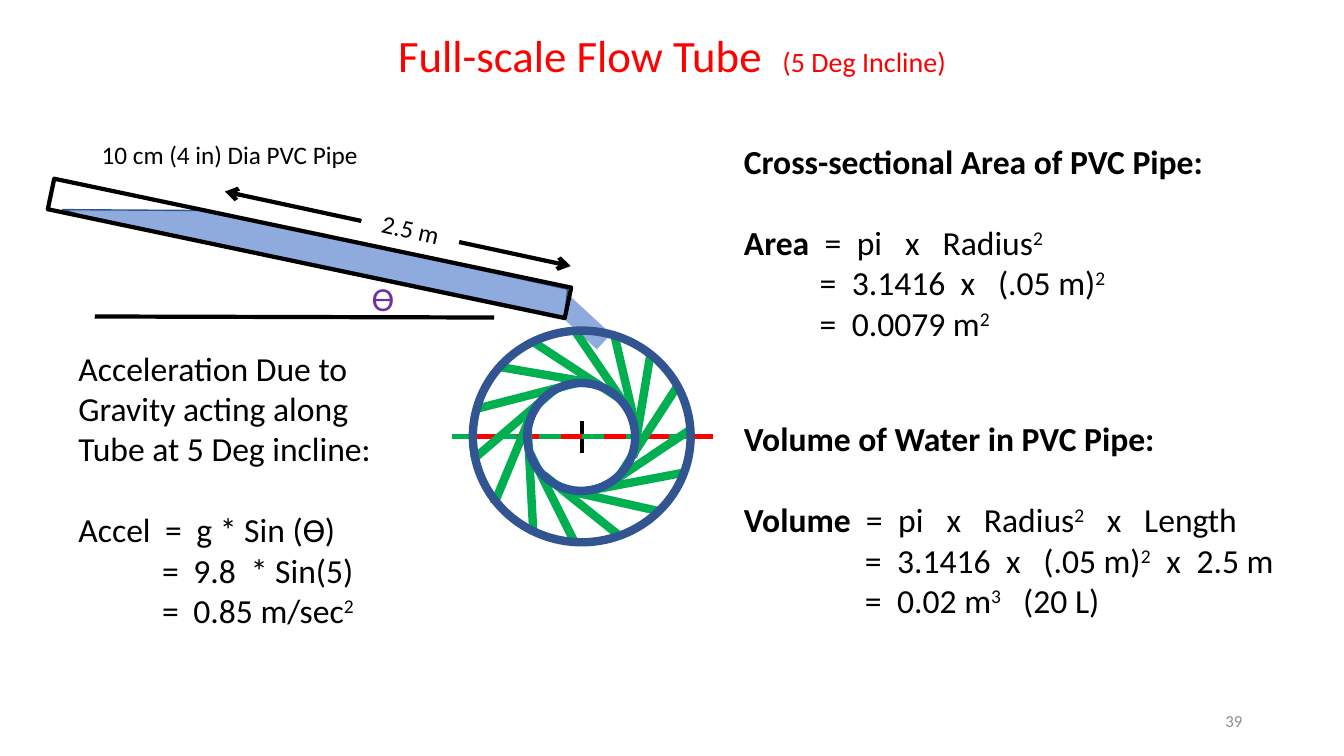
from pptx import Presentation
from pptx.dml.color import RGBColor
from pptx.enum import shapes, text
from pptx.oxml.ns import qn
from pptx.util import Inches, Pt
from lxml import etree


def draw_line(parent, points, color, width, arrows=False):
    """Add a straight line; points are x1, y1, x2, y2 in inches."""
    line = parent.shapes.add_connector(
        shapes.MSO_CONNECTOR.STRAIGHT, *[Inches(v) for v in points])
    line.line.color.rgb = RGBColor.from_string(color)
    line.line.width = Pt(width)
    properties = line.line._get_or_add_ln()
    if arrows:
        for end in ("a:headEnd", "a:tailEnd"):
            etree.SubElement(properties, qn(end), type="arrow")
    etree.SubElement(properties.getparent(), qn("a:effectLst"))


def style(item, color, size, bold=None):
    """Set the font of a paragraph or a run."""
    item.font.name = "Calibri"
    item.font.size = Pt(size)
    item.font.bold = bold
    item.font.color.rgb = RGBColor.from_string(color)


prs = Presentation()
prs.slide_width, prs.slide_height = Inches(13.33), Inches(7.5)
slide = prs.slides.add_slide(prs.slide_layouts[5])

# Title
title = slide.shapes.title
title.left, title.top = Inches(1.54), Inches(0.22)
title.width, title.height = Inches(10.25), Inches(0.64)
title.text_frame.auto_size = text.MSO_AUTO_SIZE.NONE
title.text_frame.vertical_anchor = text.MSO_ANCHOR.TOP
heading = title.text_frame.paragraphs[0]
heading.alignment = text.PP_ALIGN.CENTER
for words, size in (("Full-scale Flow Tube  ", 32), ("(5 Deg Incline)", 20)):
    run = heading.add_run()
    run.text = words
    style(run, "FF0000", size)

# Water in and below the pipe
draw_line(slide, (5.58, 3.01, 5.99, 3.39), "8FAADC", 15)
water_outline = [(Inches(x), Inches(y)) for x, y in
                 [(0.62, 2.08), (2.08, 2.09), (5.63, 2.87), (5.6, 3.14), (0.82, 2.14)]]
builder = slide.shapes.build_freeform(*water_outline[0], scale=1.0)
builder.add_line_segments(water_outline[1:], close=True)
water = builder.convert_to_shape()
water.shadow.inherit = False
water.fill.solid()
water.fill.fore_color.rgb = RGBColor.from_string("8FAADC")
water.line.color.rgb = RGBColor.from_string("325491")
water.line.width = Pt(1)

# Water wheel: axle cross, dashed centre line, vanes, rims
wheel = slide.shapes.add_group_shape()
draw_line(wheel, (5.77, 4.18, 5.77, 4.49), "000000", 3)
draw_line(wheel, (5.61, 4.33, 5.93, 4.33), "000000", 3)
DASH = 0.216
for i in range(12):
    left = 4.48 + i * DASH
    draw_line(wheel, (left, 4.33, left + DASH, 4.33), ("00B050", "FF0000")[i % 2], 3)

vanes = [
    (5.7, 3.28, 6.28, 4.13), (6.09, 3.31, 6.32, 4.29), (6.45, 3.52, 6.28, 4.54),
    (6.85, 4.26, 5.97, 4.85), (6.72, 3.83, 6.11, 4.77), (6.78, 4.69, 5.72, 4.89),
    (6.53, 5.07, 5.55, 4.85), (6.15, 5.32, 5.39, 4.71), (5.71, 5.4, 5.26, 4.5),
    (4.9, 5, 5.29, 4.06), (5.29, 5.29, 5.23, 4.18), (4.69, 4.56, 5.52, 3.85),
    (4.95, 3.64, 5.94, 3.81), (4.71, 4.06, 5.72, 3.8), (5.27, 3.38, 6.14, 3.95),
]
for vane in vanes:
    draw_line(wheel, vane, "00B050", 6)

# Wheel rims and pipe wall
OVAL, RECT = shapes.MSO_SHAPE.OVAL, shapes.MSO_SHAPE.RECTANGLE
for parent, kind, box, turn, color, width in [
    (wheel, OVAL, (4.69, 3.28, 2.16, 2.1), 0, "325491", 6),
    (wheel, OVAL, (5.23, 3.8, 1.07, 1.07), 0, "2F5597", 6),
    (slide, RECT, (0.45, 2.31, 5.24, 0.31), 11.9, "000000", 3),
]:
    outline = parent.shapes.add_shape(kind, *[Inches(v) for v in box])
    outline.shadow.inherit = False
    outline.fill.background()
    outline.line.color.rgb = RGBColor.from_string(color)
    outline.line.width = Pt(width)
    outline.rotation = turn

# Ground line and pipe length
draw_line(slide, (4.9, 3.15, 0.94, 3.14), "000000", 3)
draw_line(slide, (2.23, 1.9, 5.66, 2.64), "000000", 3, arrows=True)

# Labels
LEFT, CENTER, RIGHT = text.PP_ALIGN.LEFT, text.PP_ALIGN.CENTER, text.PP_ALIGN.RIGHT
for words, box, size, color, align, turn in [
    ("10 cm (4 in) Dia PVC Pipe", (0.91, 1.33, 4.38, 0.4), 18, "000000", LEFT, 0),
    ("ϴ", (3.59, 2.71, 0.68, 0.5), 24, "7030A0", LEFT, 0),
    ("2.5 m", (3.58, 2.07, 0.99, 0.4), 18, "000000", CENTER, 12.8),
    ("39", (9.42, 6.95, 3, 0.4), 12, "8C8C8C", RIGHT, 0),
]:
    label = slide.shapes.add_textbox(*[Inches(v) for v in box])
    label.rotation = turn
    if turn:
        label.fill.solid()
        label.fill.fore_color.rgb = RGBColor.from_string("FFFFFF")
    label.text_frame.word_wrap = True
    label.text_frame.vertical_anchor = text.MSO_ANCHOR.MIDDLE
    paragraph = label.text_frame.paragraphs[0]
    paragraph.text = words
    paragraph.alignment = align
    style(paragraph, color, size)

# Calculations: heading, then rows of (text, tab stops in inches); ^ raises a digit
calculations = [
    ((7.28, 4.1, 5.71, 2.12), True, "Volume of Water in PVC Pipe:", [
        ("Volume\t=\tpi\tx\tRadius^2\tx\tLength", (1.21, 1.53, 2.01, 2.38, 3.6, 3.97)),
        ("\t=\t3.1416\tx\t(.05 m)^2\tx\t2.5 m", (1.2, 1.52, 2.6, 2.97, 4.19, 4.49)),
        ("\t=\t0.02 m^3\t(20 L)", (1.2, 1.52, 2.77)),
    ]),
    ((0.68, 3.4, 3.35, 2.93), False,
     "Acceleration Due to Gravity acting along Tube at 5 Deg incline:", [
        ("Accel\t=\tg * Sin (ϴ)", (0.86, 1.17)),
        ("\t=\t9.8\t* Sin(5)", (0.83, 1.14, 1.71)),
        ("\t=\t0.85 m/sec^2", (0.83, 1.14)),
    ]),
    ((7.28, 1.35, 5.71, 2.12), True, "Cross-sectional Area of PVC Pipe:", [
        ("Area\t=\tpi\tx\tRadius^2", (0.8, 1.12, 1.6, 1.97)),
        ("\t=\t3.1416\tx\t(.05 m)^2", (0.75, 1.07, 2.15, 2.52)),
        ("\t=\t0.0079 m^2", (0.75, 1.07)),
    ]),
]
for box, bold, subject, rows in calculations:
    frame = slide.shapes.add_textbox(*[Inches(v) for v in box]).text_frame
    frame.word_wrap = True
    frame.paragraphs[0].text = subject
    style(frame.paragraphs[0], "000000", 24, bold)
    for row_number, (formula, stops) in enumerate(rows):
        paragraph = frame.add_paragraph()
        if row_number == 0:
            paragraph.space_before = Pt(29)
        tabs = etree.SubElement(paragraph._p.get_or_add_pPr(), qn("a:tabLst"))
        for stop in stops:
            etree.SubElement(tabs, qn("a:tab"), pos=str(Inches(stop)), algn="l")
        style(paragraph, "000000", 24)
        name, rest = formula.split("\t", 1)
        if name:
            run = paragraph.add_run()
            run.text = name
            run.font.bold = bold
        for i, part in enumerate(("\t" + rest).split("^")):
            if i:
                power = paragraph.add_run()
                power.text = part[0]
                power._r.get_or_add_rPr().set("baseline", "30000")
                part = part[1:]
            if part:
                paragraph.add_run().text = part

prs.save("out.pptx")
